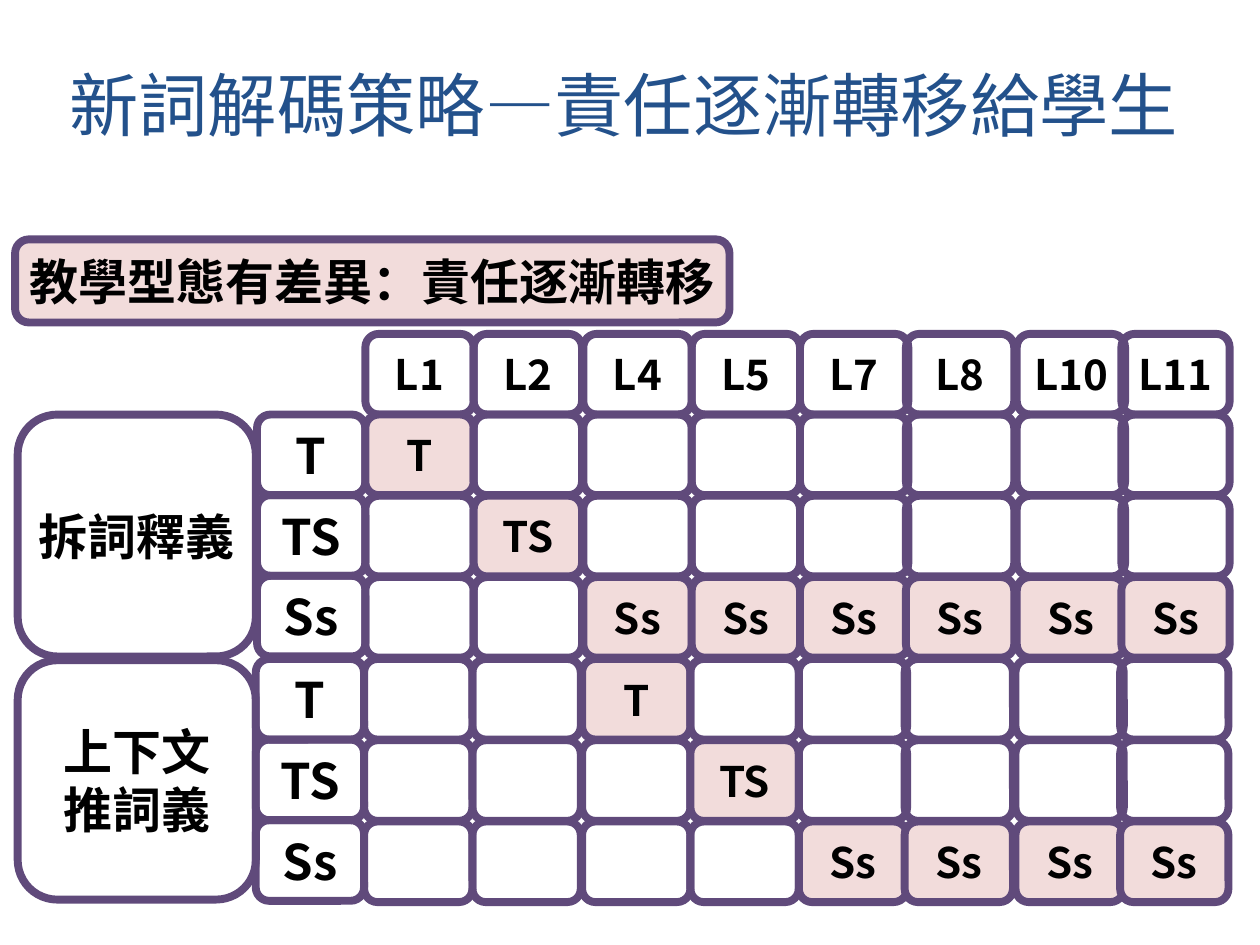
import pptx
import pptx.util
import pptx.dml.color
import pptx.enum.shapes
import pptx.enum.text
import pptx.oxml.ns
from lxml import etree

Inches, Pt = pptx.util.Inches, pptx.util.Pt

FONT = "Noto Sans CJK SC"
COLORS = {"title": "23518B", "text": "000000", "border": "604A7B", "active": "F2DCDB"}

TITLE = "新詞解碼策略—責任逐漸轉移給學生"
BANNER = "教學型態有差異：責任逐漸轉移"
LESSONS = ["L1", "L2", "L4", "L5", "L7", "L8", "L10", "L11"]
MODES = ["T", "TS", "Ss"]
# For each strategy, the lessons taught in each mode
STRATEGIES = [
    {"name": ["拆詞釋義"], "left": 2.04, "top": 3.29, "box": (3.29, 1.92),
     "T": ["L1"], "TS": ["L2"], "Ss": ["L4", "L5", "L7", "L8", "L10", "L11"]},
    {"name": ["上下文", "推詞義"], "left": 2.03, "top": 5.23, "box": (5.24, 1.9),
     "T": ["L4"], "TS": ["L5"], "Ss": ["L7", "L8", "L10", "L11"]},
]

CELL_W, CELL_H = 0.86, 0.64
ROW_PITCH = 0.645
HEADER_TOP = 2.65
# Lesson columns, measured from the left edge of the mode column
LESSON_OFFSETS = [0.86, 1.72, 2.59, 3.45, 4.31, 5.15, 6.03, 6.86]
MODE_SIZE, LESSON_SIZE = 28, 24


def rgb(name):
    return pptx.dml.color.RGBColor.from_string(COLORS[name])


def write(tf, lines, size, color="text", bold=True):
    tf.word_wrap = True
    tf.vertical_anchor = pptx.enum.text.MSO_ANCHOR.MIDDLE
    for i, line in enumerate(lines):
        p = tf.paragraphs[0] if i == 0 else tf.add_paragraph()
        p.alignment = pptx.enum.text.PP_ALIGN.CENTER
        r = p.add_run()
        r.text = line
        r.font.size, r.font.bold, r.font.name = Pt(size), bold, FONT
        r.font.color.rgb = rgb(color)
        ea = etree.SubElement(r.font._element, pptx.oxml.ns.qn("a:ea"))
        ea.set("typeface", FONT)


def add_box(shapes, left, top, width, height, lines=(), size=LESSON_SIZE, active=False):
    sp = shapes.add_shape(pptx.enum.shapes.MSO_SHAPE.ROUNDED_RECTANGLE,
                          Inches(left), Inches(top), Inches(width), Inches(height))
    sp.shadow.inherit = False
    if active:
        sp.fill.solid()
        sp.fill.fore_color.rgb = rgb("active")
    else:
        sp.fill.background()
    sp.line.color.rgb = rgb("border")
    sp.line.width = Pt(4.5)
    tf = sp.text_frame
    tf.margin_left = tf.margin_right = Inches(0.04)
    write(tf, lines, size)


def add_strategy(shapes, strategy):
    left, top = strategy["left"], strategy["top"]
    box_top, box_height = strategy["box"]
    add_box(shapes, 0.14, box_top, 1.89, box_height, strategy["name"], MODE_SIZE)
    for row, mode in enumerate(MODES):
        add_box(shapes, left, top + row * CELL_H, CELL_W, CELL_H, [mode], MODE_SIZE)
        for lesson, offset in zip(LESSONS, LESSON_OFFSETS):
            active = lesson in strategy[mode]
            add_box(shapes, left + offset, top + row * ROW_PITCH, CELL_W, CELL_H,
                    [mode] if active else [], active=active)


def main():
    prs = pptx.Presentation()
    prs.slide_width, prs.slide_height = Inches(10), Inches(7.5)
    s = prs.slides.add_slide(prs.slide_layouts[5])

    title = s.shapes.title
    title.left, title.top = Inches(0.33), Inches(0.2)
    title.width, title.height = Inches(9.24), Inches(1.25)
    write(title.text_frame, [TITLE], 39.6, "title", bold=False)

    header = s.shapes.add_group_shape().shapes
    for lesson, offset in zip(LESSONS, LESSON_OFFSETS):
        add_box(header, STRATEGIES[0]["left"] + offset, HEADER_TOP, CELL_W, CELL_H, [lesson])
    for strategy in STRATEGIES:
        add_strategy(s.shapes.add_group_shape().shapes, strategy)

    add_box(s.shapes, 0.12, 1.9, 5.67, 0.66, [BANNER], MODE_SIZE, active=True)
    prs.save("out.pptx")


if __name__ == "__main__":
    main()
